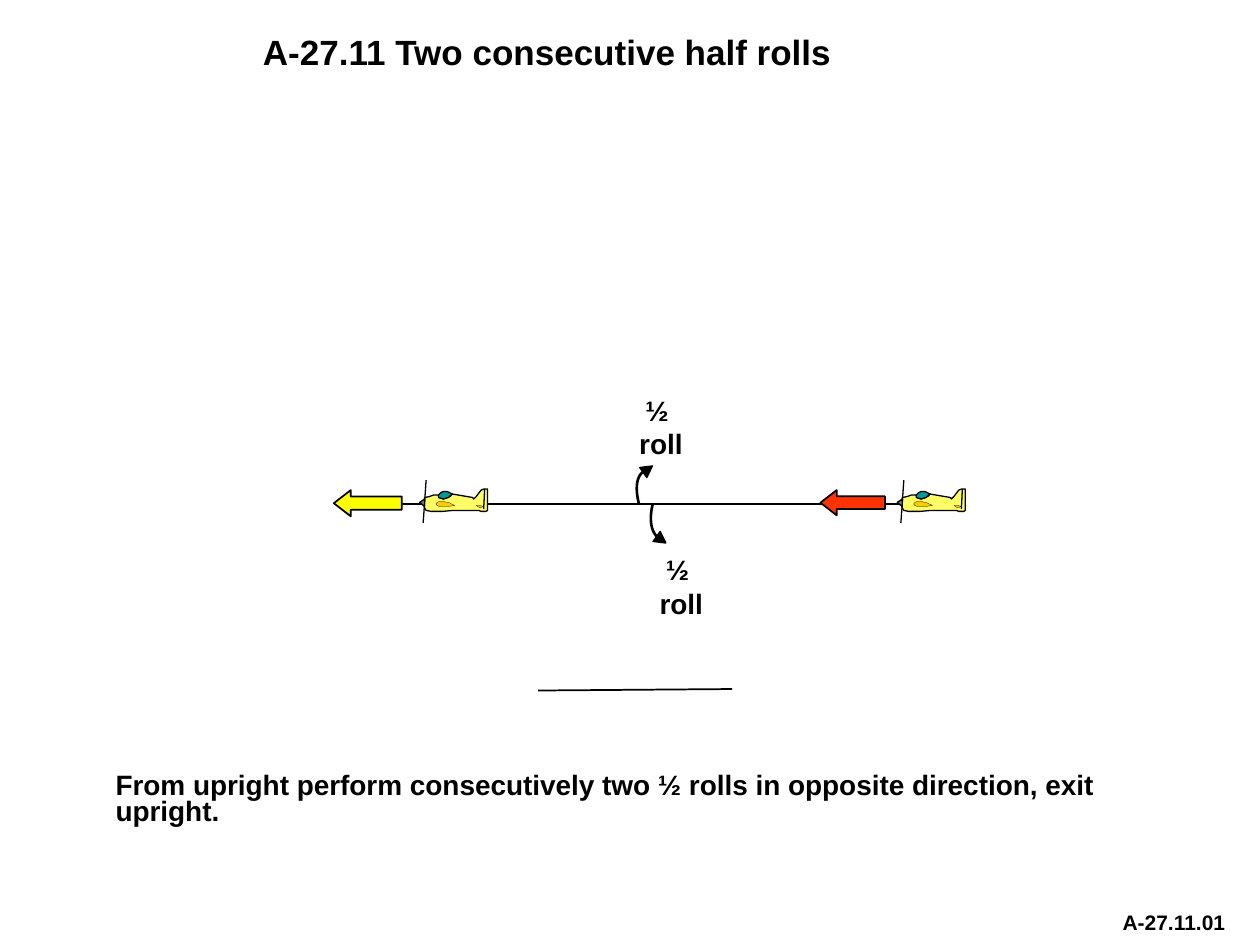
from lxml.etree import SubElement
from pptx import Presentation
from pptx.dml.color import RGBColor
from pptx.enum.shapes import MSO_CONNECTOR, MSO_SHAPE
from pptx.enum.text import MSO_ANCHOR, MSO_AUTO_SIZE, PP_ALIGN
from pptx.oxml.ns import qn
from pptx.util import Cm, Pt

COLOURS = {
    "black": "000000", "white": "FFFFFF", "red": "FF3300", "yellow": "FFFF00",
    "body": "FFFF66", "canopy": "009999", "wing": "FFCC00", "spinner": "808080",
}
TITLE = "A-27.11 Two consecutive half rolls"
CODE = "A-27.11.01"
DESCRIPTION = "From upright perform consecutively two ½ rolls in opposite direction, exit upright."
ROLL_LABEL = ["½ ", "roll"]
LABEL_PLACES = [(12.12, 11.02), (11.71, 7.8)]
FLIGHT_Y = 10.16
BASE_LINE = ((10.85, 13.92), (14.76, 13.89))
FLIGHT_LINE = ((7.44, FLIGHT_Y), (19.48, FLIGHT_Y))
ARROWS = [
    ("red", (16.54, 9.88, 1.3, 0.51), 0.645),
    ("yellow", (6.73, 9.88, 1.37, 0.53), 0.649),
]
ROLLS = [
    ([(12.88, 10.16), (12.8, 9.83), (12.83, 9.6), (12.98, 9.5)], (13.06, 9.46), 54.5),
    ([(13.16, 10.16), (13.08, 10.49), (13.13, 10.74), (13.28, 10.85)], (13.33, 10.88), 125.5),
]
PLANE_LEFTS = [18.19, 8.56]
PLANE_PARTS = [
    ("body", 0.75, [
        (0.28, -0.18), (0.18, -0.18), (0.1, -0.15), (0, -0.13), (0, 0.08), (0.03, 0.13),
        (0.13, 0.15), (0.36, 0.15), (0.58, 0.13), (1.09, 0.13), (1.14, 0.15), (1.24, 0.15),
        (1.27, 0.13), (1.27, -0.3), (1.19, -0.3), (1.14, -0.28), (1.04, -0.15), (0.99, -0.1),
        (0.97, -0.13), (0.56, -0.2), (0.51, -0.15), (0.38, -0.1), (0.3, -0.13)]),
    ("canopy", 0.75, [
        (0.56, -0.2), (0.48, -0.13), (0.38, -0.1), (0.28, -0.13), (0.28, -0.18),
        (0.33, -0.23), (0.38, -0.25), (0.46, -0.25)]),
    ("wing", 0.13, [
        (0.61, 0.03), (0.48, -0.03), (0.38, -0.05), (0.3, -0.05), (0.25, -0.03),
        (0.23, 0), (0.25, 0.03), (0.3, 0.05), (0.48, 0.05)]),
    ("wing", 0.13, [(1.19, 0.05), (1.12, 0.08), (1.07, 0.05), (1.04, 0.03), (1.12, 0.03)]),
]
LOWER_BLADE = ((-0.03, 0.38), (0, -0.03))
UPPER_BLADE = ((0, -0.05), (0.03, -0.48))
RUDDER = ((1.19, 0.1), (1.21, -0.3))


def colour(name):
    return RGBColor.from_string(COLOURS[name])


def paint(shape, fill, width):
    shape.shadow.inherit = False
    if fill:
        shape.fill.solid()
        shape.fill.fore_color.rgb = colour(fill)
    else:
        shape.fill.background()
    shape.line.color.rgb = colour("black")
    shape.line.width = Pt(width)


def add_line(shapes, start, end, width):
    line = shapes.add_connector(MSO_CONNECTOR.STRAIGHT, *map(Cm, start + end))
    line.line.color.rgb = colour("black")
    line.line.width = Pt(width)
    SubElement(line._element.spPr, qn("a:effectLst"))


def add_outline(shapes, points, fill, width, close=True):
    corners = [(Cm(x), Cm(y)) for x, y in points]
    builder = shapes.build_freeform(*corners[0])
    builder.add_line_segments(corners[1:], close=close)
    paint(builder.convert_to_shape(), fill, width)


def add_triangle(shapes, centre, size, angle, fill):
    (x, y), (width, height) = centre, size
    triangle = shapes.add_shape(
        MSO_SHAPE.ISOSCELES_TRIANGLE,
        Cm(x - width / 2), Cm(y - height / 2), Cm(width), Cm(height))
    triangle.rotation = angle
    paint(triangle, fill, 0.75)


def curve_points(controls, steps=16):
    weights = (1, 3, 3, 1)
    return [
        tuple(sum(weight * (1 - t) ** (3 - i) * t ** i * point[axis]
                  for i, (weight, point) in enumerate(zip(weights, controls)))
              for axis in (0, 1))
        for t in (step / steps for step in range(steps + 1))]


def add_roll(page, controls, tip, angle):
    shapes = page.shapes.add_group_shape().shapes
    add_outline(shapes, curve_points(controls), None, 1.5, close=False)
    add_triangle(shapes, tip, (0.25, 0.23), angle, "black")


def add_plane(page, left):
    shapes = page.shapes.add_group_shape().shapes

    def place(points):
        return [(left + x, FLIGHT_Y + y) for x, y in points]

    add_line(shapes, *place(LOWER_BLADE), 0.75)
    for fill, width, points in PLANE_PARTS:
        add_outline(shapes, place(points), fill, width)
    add_line(shapes, *place(RUDDER), 0.75)
    add_triangle(shapes, place([(-0.05, -0.03)])[0], (0.15, 0.1), 273, "spinner")
    add_line(shapes, *place(UPPER_BLADE), 0.75)


def add_arrow(page, fill, area, head):
    arrow = page.shapes.add_shape(MSO_SHAPE.LEFT_ARROW, *map(Cm, area))
    arrow.adjustments[0] = 0.5
    arrow.adjustments[1] = head
    paint(arrow, fill, 1)


def write(box, lines, size, align=PP_ALIGN.LEFT, wrap=True, spacing=1.0):
    frame = box.text_frame
    frame.word_wrap = wrap
    frame.auto_size = MSO_AUTO_SIZE.NONE
    frame.vertical_anchor = MSO_ANCHOR.TOP
    para = frame.paragraphs[0]
    para.alignment = align
    para.line_spacing = spacing
    for number, line in enumerate(lines):
        if number:
            para.add_line_break()
        span = para.add_run()
        span.text = line
        span.font.name = "Arial"
        span.font.size = Pt(size)
        span.font.bold = True
        span.font.color.rgb = colour("black")


def add_text(page, area, lines, size, **layout):
    box = page.shapes.add_textbox(*map(Cm, area))
    write(box, lines, size, **layout)
    return box


def main():
    """Build the slide of the two half rolls and save it."""
    deck = Presentation()
    deck.slide_width, deck.slide_height = Cm(25.4), Cm(19.05)
    page = deck.slides.add_slide(deck.slide_layouts[5])

    title = page.shapes.title
    title.left, title.top, title.width, title.height = map(Cm, (4.88, 0.51, 12.8, 1.07))
    write(title, [TITLE], 20)
    title.text_frame.margin_left = Cm(0.42)
    title.text_frame.margin_top = Cm(0.1)

    add_text(page, (22.38, 18.21, 2.62, 0.76), [CODE], 12, wrap=False)
    add_line(page.shapes, *BASE_LINE, 1)
    description = add_text(page, (2.08, 15.47, 22.12, 1.35), [DESCRIPTION], 16, spacing=0.8)
    description.fill.solid()
    description.fill.fore_color.rgb = colour("white")

    add_line(page.shapes, *FLIGHT_LINE, 1)
    for arrow in ARROWS:
        add_arrow(page, *arrow)
    for roll in ROLLS:
        add_roll(page, *roll)
    for left in PLANE_LEFTS:
        add_plane(page, left)
    for left, top in LABEL_PLACES:
        add_text(page, (left, top, 3.23, 1.63), ROLL_LABEL, 16, align=PP_ALIGN.CENTER)
    deck.save("out.pptx")


if __name__ == "__main__":
    main()
